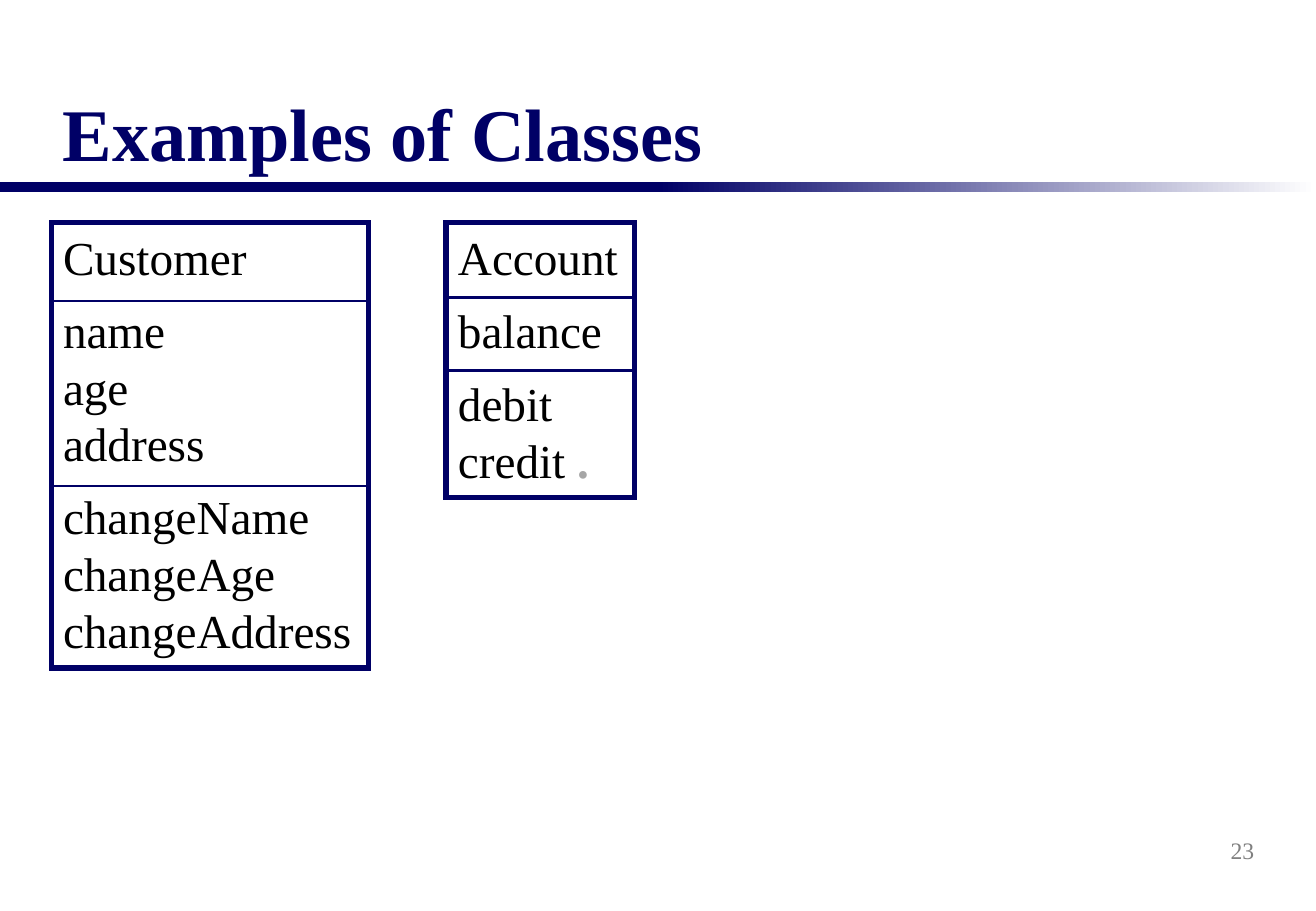
import dataclasses

import lxml.etree
import pptx
import pptx.dml.color
import pptx.enum.shapes
import pptx.enum.text
import pptx.oxml.ns
import pptx.util

PX = 9144  # 100 px to the inch
ANCHOR = pptx.enum.text.MSO_ANCHOR
ALIGN = pptx.enum.text.PP_ALIGN
RECT = pptx.enum.shapes.MSO_SHAPE.RECTANGLE
STRAIGHT = pptx.enum.shapes.MSO_CONNECTOR.STRAIGHT


@dataclasses.dataclass(frozen=True)
class Theme:
    font: str = "Times New Roman"
    navy: str = "000066"
    white: str = "FFFFFF"
    black: str = "000000"
    grey: str = "808080"
    pale: str = "A6A6A6"
    title: int = 44
    body: int = 28
    number: int = 14
    border: float = 3
    divider: float = 1.5
    line_spacing: float = 1.0
    section_gap: float = 9.6


def rgb(value):
    return pptx.dml.color.RGBColor.from_string(value)


def apply(target, values):
    for name, value in values.items():
        setattr(target, name, value)


class Deck:
    def __init__(self, theme, width, height):
        self.theme = theme
        self.prs = pptx.Presentation()
        apply(self.prs, {"slide_width": width * PX, "slide_height": height * PX})
        self.s = self.prs.slides.add_slide(self.prs.slide_layouts[6])

    def run(self, p, text, size, color, bold=False):
        r = p.add_run()
        r.text = text
        apply(r.font, {"name": self.theme.font, "size": pptx.util.Pt(size), "bold": bold})
        r.font.color.rgb = rgb(color)

    def rect(self, x, y, w, h):
        sp = self.s.shapes.add_shape(RECT, x * PX, y * PX, w * PX, h * PX)
        sp.shadow.inherit = False
        return sp

    def bar(self, x, y, w, h, start, end):
        """Borderless band, shaded from left to right when its two colours differ."""
        sp = self.rect(x, y, w, h)
        sp.line.fill.background()
        if start == end:
            sp.fill.solid()
            sp.fill.fore_color.rgb = rgb(start)
            return
        sp.fill.gradient()
        sp.fill.gradient_angle = 0
        for stop, color, position in zip(sp.fill.gradient_stops, (start, end), (0, 1)):
            stop.color.rgb = rgb(color)
            stop.position = position

    def text(self, x, y, w, h, text, size, color, bold=False, wrap=True,
             anchor=ANCHOR.MIDDLE, align=ALIGN.LEFT):
        tf = self.s.shapes.add_textbox(x * PX, y * PX, w * PX, h * PX).text_frame
        apply(tf, {"word_wrap": wrap, "vertical_anchor": anchor})
        p = tf.paragraphs[0]
        p.alignment = align
        self.run(p, text, size, color, bold)

    def divider(self, x, y, w):
        line = self.s.shapes.add_connector(STRAIGHT, x * PX, y * PX, (x + w) * PX, y * PX)
        line.line.color.rgb = rgb(self.theme.navy)
        line.line.width = pptx.util.Pt(self.theme.divider)
        lxml.etree.SubElement(line._element.spPr, pptx.oxml.ns.qn("a:effectLst"))

    def class_box(self, x, y, w, h, sections, dividers, mark=""):
        """UML class: sections of lines, dividers at given heights, a pale closing mark."""
        t = self.theme
        sp = self.rect(x, y, w, h)
        sp.fill.background()
        sp.line.color.rgb = rgb(t.navy)
        sp.line.width = pptx.util.Pt(t.border)
        outline = sp._element.spPr.find(pptx.oxml.ns.qn("a:ln"))
        lxml.etree.SubElement(outline, pptx.oxml.ns.qn("a:miter"), lim="800000")
        tf = sp.text_frame
        apply(tf, {"word_wrap": True, "vertical_anchor": ANCHOR.TOP})
        p = None
        for section in sections:
            for i, text in enumerate(section):
                starts_section = p is not None and i == 0
                p = tf.paragraphs[0] if p is None else tf.add_paragraph()
                apply(p, {"alignment": ALIGN.LEFT, "line_spacing": t.line_spacing,
                          "space_before": pptx.util.Pt(t.section_gap if starts_section else 0)})
                self.run(p, text, t.body, t.black)
        if mark:
            self.run(p, mark, t.body, t.pale, bold=True)
        for divider_y in dividers:
            self.divider(x, divider_y, w)


def main():
    t = Theme()
    deck = Deck(t, 1083, 750)
    deck.bar(0, 150, 542, 8, t.navy, t.navy)
    deck.bar(541, 150, 542, 8, t.navy, t.white)
    deck.text(42, 29, 1000, 121, "Examples of Classes", t.title, t.navy,
              bold=True, anchor=ANCHOR.BOTTOM)
    deck.class_box(42, 183, 261, 367,
                   [["Customer"], ["name", "age", "address"],
                    ["changeName", "changeAge", "changeAddress"]],
                   [248, 400])
    deck.class_box(367, 183, 155, 227,
                   [["Account"], ["balance"], ["debit", "credit"]],
                   [245, 305], mark=" .")
    deck.text(816, 675, 226, 50, "23", t.number, t.grey, align=ALIGN.RIGHT)
    deck.prs.save("out.pptx")


if __name__ == "__main__":
    main()
